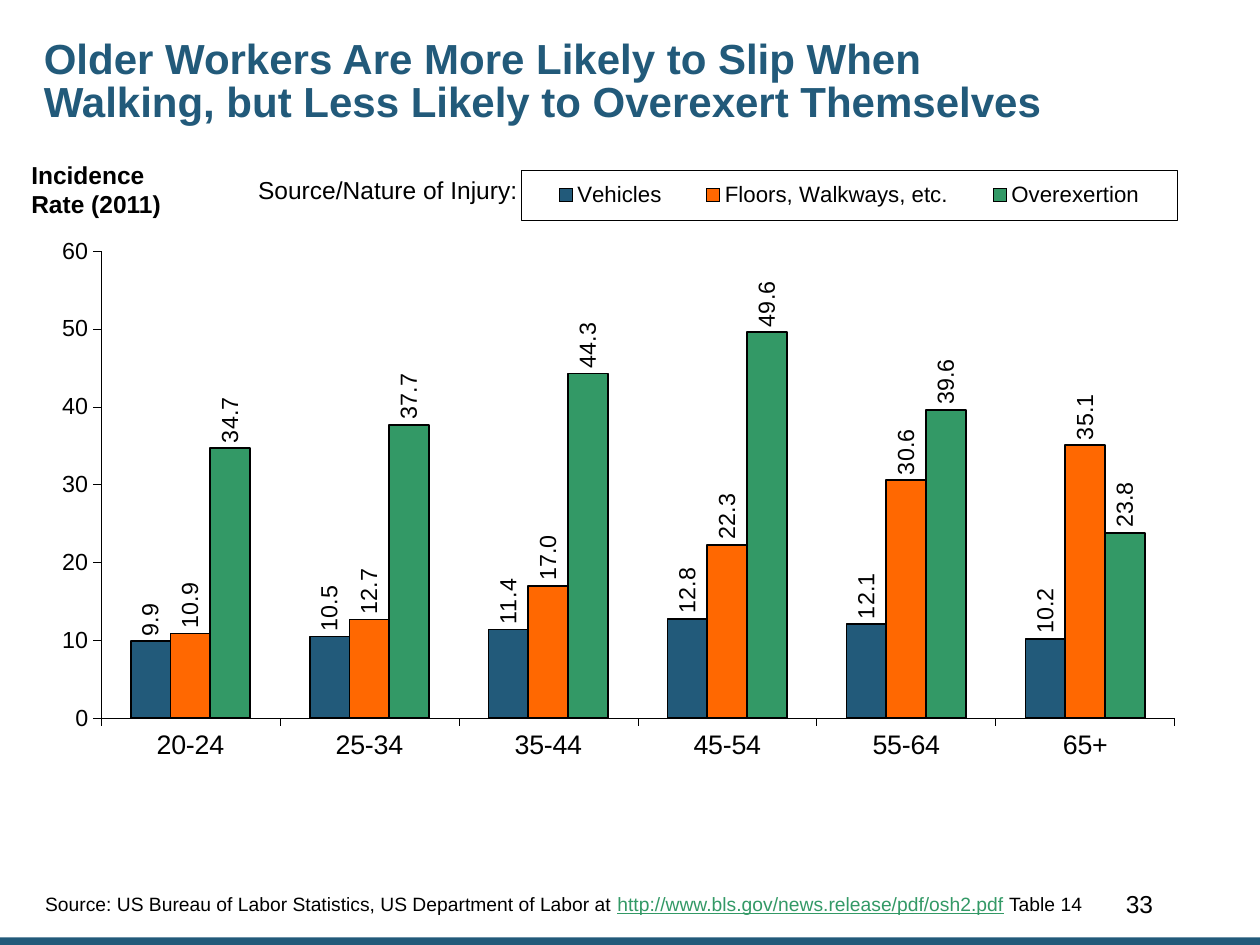
from lxml import etree
from pptx import Presentation
from pptx.chart.data import CategoryChartData
from pptx.dml.color import RGBColor
from pptx.enum.chart import XL_CHART_TYPE, XL_LABEL_POSITION, XL_LEGEND_POSITION, XL_TICK_MARK
from pptx.enum.shapes import MSO_SHAPE
from pptx.enum.text import MSO_ANCHOR, PP_ALIGN
from pptx.oxml import parse_xml
from pptx.oxml.ns import nsdecls, qn
from pptx.util import Pt

COLUMN = XL_CHART_TYPE.COLUMN_CLUSTERED
OUTSIDE_END = XL_LABEL_POSITION.OUTSIDE_END
LEGEND_TOP = XL_LEGEND_POSITION.TOP
TICK_OUTSIDE = XL_TICK_MARK.OUTSIDE
RECTANGLE = MSO_SHAPE.RECTANGLE
TOP, MIDDLE = MSO_ANCHOR.TOP, MSO_ANCHOR.MIDDLE
LEFT, RIGHT = PP_ALIGN.LEFT, PP_ALIGN.RIGHT

FONT = "Arial"
COLORS = {"blue": "225A7A", "orange": "FF6801", "green": "339966", "black": "000000"}

TEXTS = [
    {"box": (18, 19.4, 604, 49), "runs": [
        ("Older Workers Are More Likely to Slip When Walking, "
         "but Less Likely to Overexert Themselves",
         {"size": 24, "color": "blue", "bold": True})],
     "line_spacing": 0.85},
    {"box": (516.2, 498.2, 149.8, 36), "runs": [("33", {"size": 14})],
     "anchor": MIDDLE, "alignment": RIGHT},
    {"box": (18.7, 506.2, 626.4, 20.9), "runs": [
        ("Source: US Bureau of Labor Statistics, US Department of Labor at ", {"size": 11}),
        ("http://www.bls.gov/news.release/pdf/osh2.pdf",
         {"size": 11, "color": "green", "underline": True}),
        (" Table 14", {"size": 11})]},
    {"box": (10.8, 87.8, 103.7, 41), "runs": [
        ("Incidence Rate (2011)", {"size": 14, "bold": True})]},
    {"box": (140.4, 96.5, 164.2, 24.5), "runs": [("Source/Nature of Injury:", {"size": 14})],
     "wrap": False},
]

CHART_BOX = (23, 94.3, 692.6, 362.2)
PLOT_LAYOUT = (0.05, 0.136, 0.886, 0.737)
LEGEND_LAYOUT = (0.397, 0.008, 0.541, 0.079)
AGE_GROUPS = ["20-24", "25-34", "35-44", "45-54", "55-64", "65+"]
SERIES = [
    ("Vehicles", "blue", [9.9, 10.5, 11.4, 12.8, 12.1, 10.2]),
    ("Floors, Walkways, etc.", "orange", [10.9, 12.7, 17.0, 22.3, 30.6, 35.1]),
    ("Overexertion", "green", [34.7, 37.7, 44.3, 49.6, 39.6, 23.8]),
]


def rgb(name):
    return RGBColor.from_string(COLORS[name])


def points(box):
    return [Pt(length) for length in box]


def set_font(font, size, color="black", **values):
    font.color.rgb = rgb(color)
    formats = {"name": FONT, "size": Pt(size), "bold": False, **values}
    for attribute, value in formats.items():
        setattr(font, attribute, value)


def set_line(line, width):
    line.color.rgb = rgb("black")
    line.width = Pt(width)


def add_text(slide, box, runs, anchor=TOP, alignment=LEFT, line_spacing=1.0, wrap=True):
    frame = slide.shapes.add_textbox(*points(box)).text_frame
    frame.word_wrap = wrap
    frame.vertical_anchor = anchor
    paragraph = frame.paragraphs[0]
    paragraph.alignment = alignment
    paragraph.line_spacing = line_spacing
    for text, formats in runs:
        run = paragraph.add_run()
        run.text = text
        set_font(run.font, **formats)


def set_layout(element, position, values, inner=False):
    for old_layout in element.findall(qn("c:layout")):
        element.remove(old_layout)
    layout = parse_xml(f"<c:layout {nsdecls('c')}><c:manualLayout/></c:layout>")
    entries = [("layoutTarget", "inner")] if inner else []
    entries += [("xMode", "edge"), ("yMode", "edge"), *zip("xywh", values)]
    for tag, value in entries:
        etree.SubElement(layout[0], qn(f"c:{tag}")).set("val", str(value))
    element.insert(position, layout)


def add_legend(chart):
    chart.has_legend = True
    legend = chart.legend
    legend.position = LEGEND_TOP
    legend.include_in_layout = False
    set_font(legend.font, 12.7)
    element = legend._element
    set_layout(element, 1, LEGEND_LAYOUT)
    border = parse_xml(
        f'<c:spPr {nsdecls("c", "a")}><a:ln w="{Pt(0.25)}"><a:solidFill>'
        f'<a:srgbClr val="{COLORS["black"]}"/></a:solidFill></a:ln></c:spPr>')
    element.find(qn("c:txPr")).addprevious(border)


def format_series(series, color):
    series.format.fill.solid()
    series.format.fill.fore_color.rgb = rgb(color)
    series.invert_if_negative = False
    set_line(series.format.line, 1)
    labels = series.data_labels
    set_font(labels.font, 13.3)
    formats = {"show_value": True, "position": OUTSIDE_END,
               "number_format": "0.0", "number_format_is_linked": False}
    for attribute, value in formats.items():
        setattr(labels, attribute, value)
    body = labels._element.find(qn("c:txPr")).find(qn("a:bodyPr"))
    body.set("rot", "-5400000")
    body.set("vert", "horz")


def add_injury_chart(slide):
    data = CategoryChartData()
    data.categories = AGE_GROUPS
    for name, color, values in SERIES:
        data.add_series(name, values)
    chart = slide.shapes.add_chart(COLUMN, *points(CHART_BOX), data).chart
    chart.has_title = False
    set_font(chart.font, 13.3)
    for axis, size in ((chart.category_axis, 15.3), (chart.value_axis, 13.3)):
        axis.has_major_gridlines = False
        axis.major_tick_mark = TICK_OUTSIDE
        set_font(axis.tick_labels.font, size)
        set_line(axis.format.line, 0.25)
    scale = {"minimum_scale": 0, "maximum_scale": 60, "major_unit": 10}
    for attribute, value in scale.items():
        setattr(chart.value_axis, attribute, value)
    chart.value_axis.tick_labels.number_format = "#,##0"
    chart.value_axis.tick_labels.number_format_is_linked = False
    plot = chart.plots[0]
    plot.gap_width, plot.overlap, plot.vary_by_categories = 150, 0, False
    for series, (name, color, values) in zip(plot.series, SERIES):
        format_series(series, color)
    plot_area = chart._chartSpace.find(qn("c:chart")).find(qn("c:plotArea"))
    set_layout(plot_area, 0, PLOT_LAYOUT, inner=True)
    add_legend(chart)


def main():
    presentation = Presentation()
    presentation.slide_width, presentation.slide_height = Pt(720), Pt(540)
    slide = presentation.slides.add_slide(presentation.slide_layouts[6])
    footer_bar = slide.shapes.add_shape(RECTANGLE, *points((0, 535.7, 720, 4.3)))
    footer_bar.shadow.inherit = False
    footer_bar.fill.solid()
    footer_bar.fill.fore_color.rgb = rgb("blue")
    footer_bar.line.fill.background()
    add_injury_chart(slide)
    for text in TEXTS:
        add_text(slide, **text)
    presentation.save("out.pptx")


if __name__ == "__main__":
    main()
